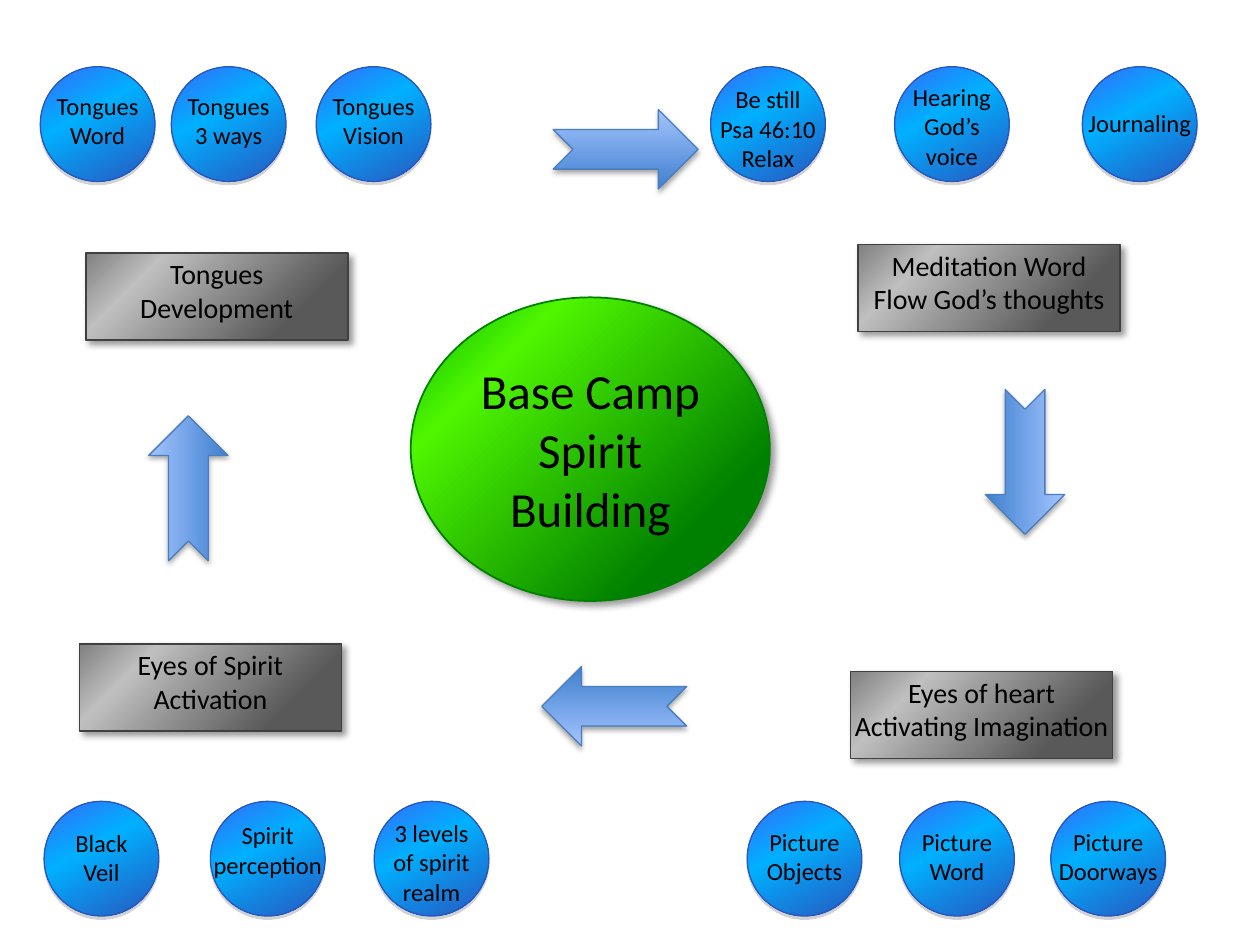
from dataclasses import dataclass

from lxml.etree import SubElement
from pptx import Presentation
from pptx.dml.color import RGBColor
from pptx.enum.shapes import MSO_SHAPE as Preset
from pptx.enum.text import MSO_ANCHOR as Anchor, PP_ALIGN as Align
from pptx.oxml.ns import qn
from pptx.util import Inches, Pt


@dataclass(frozen=True)
class Look:
    stops: tuple    # (percent, colour)
    angle: int      # clockwise degrees
    outline: str
    outline_pt: float
    shadow: tuple   # colour, opacity %, blur pt, distance pt, direction


@dataclass(frozen=True)
class Theme:
    font: str = "Calibri"
    ink: str = "000000"
    step_pt: int = 14
    stage_pt: int = 16
    hub_pt: int = 28
    step: Look = Look(((0, "336FFA"), (2, "336FFA"), (40, "00B0FF"), (100, "2856BF")),
                      61, "2856BF", 0.75, ("808080", 35, 0, 1.8, 90))
    stage: Look = Look(((22, "595959"), (77, "BFBFBF"), (100, "808080")),
                       225, "404040", 1, ("000000", 40, 4, 3, 45))
    arrow: Look = Look(((0, "3F80CE"), (100, "A4C4FF")),
                       270, "4B7EBC", 0.75, ("000000", 35, 3.1, 1.8, 90))
    hub: Look = Look(((22, "008000"), (77, "4FF600"), (100, "00B300")),
                     225, "008000", 1, ("000000", 40, 4, 3, 45))


THEME = Theme()
STEP_SIZE = 0.91
STEP_TEXT_WIDTH = 1.01
STAGE_SIZE = (2.08, 0.69)
ARROW_SIZE = (1.15, 0.63)

# Rows of steps: top, then (left, text, text offset from the circle's top)
STEP_ROWS = (
    (0.53, ((0.32, "Tongues\vWord", 0.19),
            (1.36, "Tongues\v3 ways", 0.19),
            (2.51, "Tongues\nVision", 0.19),
            (5.64, "Be still\nPsa 46:10\nRelax", 0.14),
            (7.1, "Hearing God’s\vvoice", 0.12),
            (8.59, "Journaling", 0.33))),
    (6.36, ((0.35, "Black\vVeil", 0.21),
            (1.67, "Spirit\vperception", 0.15),
            (2.97, "3 levels\vof spirit realm", 0.13),
            (5.93, "Picture Objects", 0.2),
            (7.14, "Picture\vWord", 0.2),
            (8.34, "Picture\vDoorways", 0.2))),
)
STAGES = (
    (0.68, 2.01, "Tongues\vDevelopment"),
    (6.81, 1.94, "Meditation Word\vFlow God’s thoughts"),
    (6.75, 5.33, "Eyes of heart Activating Imagination"),
    (0.63, 5.11, "Eyes of Spirit Activation"),
)
# Clockwise from the top: left, top, rotation
ARROWS = ((4.39, 0.87, 0), (7.56, 3.35, 90), (4.3, 5.29, 180), (0.92, 3.56, 270))


def add_color(parent, color, opacity=None):
    node = SubElement(parent, qn("a:srgbClr"), val=color)
    if opacity is not None:
        SubElement(node, qn("a:alpha"), val=str(opacity * 1000))


def apply_look(shape, look):
    shape.fill.gradient()
    gradient = shape._element.spPr.find(qn("a:gradFill"))
    stop_list = gradient.find(qn("a:gsLst"))
    for old_stop in list(stop_list):
        stop_list.remove(old_stop)
    for percent, color in look.stops:
        add_color(SubElement(stop_list, qn("a:gs"), pos=str(percent * 1000)), color)
    gradient.find(qn("a:lin")).set("ang", str(look.angle * 60000))

    shape.line.color.rgb = RGBColor.from_string(look.outline)
    shape.line.width = Pt(look.outline_pt)

    shape.shadow.inherit = False
    color, opacity, blur, distance, direction = look.shadow
    effects = shape._element.spPr.find(qn("a:effectLst"))
    shadow = SubElement(effects, qn("a:outerShdw"), blurRad=str(Pt(blur)),
                        dist=str(Pt(distance)), dir=str(direction * 60000),
                        rotWithShape="0")
    add_color(shadow, color, opacity)


def add_preset(shapes, preset, box, look):
    shape = shapes.add_shape(preset, *map(Inches, box))
    apply_look(shape, look)
    return shape


def write(frame, text, size):
    frame.margin_left = frame.margin_right = 0
    frame.margin_top = frame.margin_bottom = 0
    frame.word_wrap = True
    frame.text = text
    for paragraph in frame.paragraphs:
        paragraph.alignment = Align.CENTER
        for run in paragraph.runs:
            run.font.name = THEME.font
            run.font.size = Pt(size)
            run.font.color.rgb = RGBColor.from_string(THEME.ink)


def add_labelled(slide, preset, box, look, text, size, label_box):
    """Group a shape with the label that lies over it."""
    members = slide.shapes.add_group_shape().shapes
    add_preset(members, preset, box, look)
    label = members.add_textbox(*map(Inches, label_box))
    write(label.text_frame, text, size)


def add_step(slide, left, top, text, text_offset):
    label_left = left - (STEP_TEXT_WIDTH - STEP_SIZE) / 2
    add_labelled(slide, Preset.OVAL, (left, top, STEP_SIZE, STEP_SIZE), THEME.step,
                 text, THEME.step_pt,
                 (label_left, top + text_offset, STEP_TEXT_WIDTH, STEP_SIZE - 2 * text_offset))


def add_stage(slide, left, top, text):
    width, height = STAGE_SIZE
    add_labelled(slide, Preset.RECTANGLE, (left, top, width, height), THEME.stage,
                 text, THEME.stage_pt, (left, top + 0.03, width, 0.54))


def add_arrow(slide, left, top, rotation):
    arrow = add_preset(slide.shapes, Preset.NOTCHED_RIGHT_ARROW,
                       (left, top, *ARROW_SIZE), THEME.arrow)
    arrow.rotation = rotation


def add_hub(slide, box):
    hub = add_preset(slide.shapes, Preset.OVAL, box, THEME.hub)
    write(hub.text_frame, "Base Camp\nSpirit Building", THEME.hub_pt)
    hub.text_frame.vertical_anchor = Anchor.MIDDLE


def main():
    deck = Presentation()
    deck.slide_width, deck.slide_height = Inches(10), Inches(7.5)
    slide = deck.slides.add_slide(deck.slide_layouts[6])

    # Four stages with their steps
    for stage in STAGES:
        add_stage(slide, *stage)
    for top, steps in STEP_ROWS:
        for left, text, text_offset in steps:
            add_step(slide, left, top, text, text_offset)

    # Cycle of arrows around the hub
    for arrow in ARROWS:
        add_arrow(slide, *arrow)
    add_hub(slide, (3.26, 2.36, 2.85, 2.41))

    deck.save("out.pptx")


if __name__ == "__main__":
    main()
